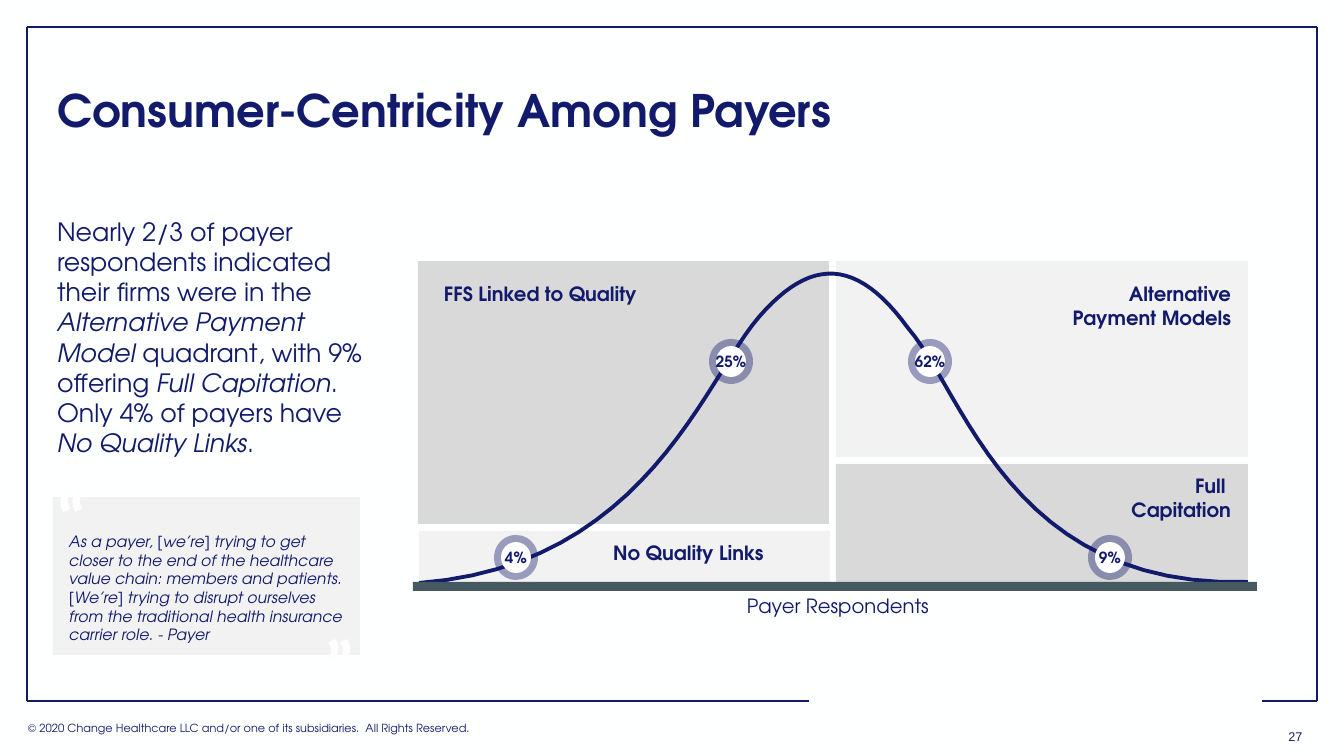
"""Build the slide on consumer-centricity among payers."""
from lxml import etree
from pptx import Presentation
from pptx.dml.color import RGBColor
from pptx.enum import shapes, text
from pptx.oxml import ns
from pptx import util as u

PX = 12192000 / 1344
NAVY = RGBColor(0x12, 0x1A, 0x6C)
SLATE = RGBColor(0x46, 0x59, 0x61)
GREY = RGBColor(0xD9, 0xD9, 0xD9)
PALE = RGBColor(0xF2, 0xF2, 0xF2)
WHITE = RGBColor(0xFF, 0xFF, 0xFF)
PAPER = RGBColor(0xFE, 0xFF, 0xFF)
QUOTE_WHITE = RGBColor(0xFE, 0xFE, 0xFE)
FONT = "TeX Gyre Adventor"
LEFT, CENTER, RIGHT = text.PP_ALIGN.LEFT, text.PP_ALIGN.CENTER, text.PP_ALIGN.RIGHT
RECTANGLE, OVAL = shapes.MSO_SHAPE.RECTANGLE, shapes.MSO_SHAPE.OVAL

TITLE = "Consumer-Centricity Among Payers"
TITLE_BOX = (47, 40, 1250, 146)
SUMMARY_BOX = (47, 211, 337, 316)
SUMMARY = [
    ("Nearly 2/3 of payer respondents indicated their firms were in the ", False),
    ("Alternative Payment Model ", True),
    ("quadrant, with 9% offering ", False),
    ("Full Capitation", True),
    (". Only 4% of payers have ", False),
    ("No Quality Links", True),
    (".", False),
]
QUOTE_BOX = (53, 497, 307, 158)
QUOTE = ("As a payer, [we’re] trying to get closer to the end of the healthcare value chain: "
         "members and patients. [We’re] trying to disrupt ourselves from the traditional "
         "health insurance carrier role. - Payer")
QUOTE_MARKS = [("“", (45, 465, 54, 102)), ("”", (313, 614, 54, 102))]
FRAME = [
    (809, 701, 27, 701), (1317, 27, 27, 27), (1317, 27, 1317, 701),
    (27, 27, 27, 701), (1317, 701, 1262, 701),
]
PANELS = [
    ((418, 261, 411, 263), GREY), ((836, 261, 412, 196), PALE),
    ((419, 531, 411, 53), PALE), ((836, 464, 412, 120), GREY),
]
CURVE = [
    (419, 583), (646, 566), (705, 379), (759, 317), (811, 257),
    (857, 258), (908, 328), (965, 394), (1010, 589), (1248, 582),
]
AXIS = (413, 582, 844, 9)
LABELS = [
    ("FFS Linked to Quality", (434, 277, 253, 34), LEFT, 14, True),
    ("No Quality Links", (539, 536, 299, 34), CENTER, 14, True),
    ("Alternative Payment Models", (1050, 277, 191, 57), RIGHT, 14, True),
    ("Full \nCapitation", (1035, 469, 206, 57), RIGHT, 14, True),
    ("Payer Respondents", (638, 589, 400, 34), CENTER, 14, False),
    ("© 2020 Change Healthcare LLC and/or one of its subsidiaries.  All Rights Reserved.",
     (18, 716, 657, 24), LEFT, 8, False),
]
PAGE_NUMBER = ("27", (1275, 714, 41, 45))
MARKERS = [("4%", 494, 535), ("9%", 1088, 535), ("25%", 709, 339), ("62%", 908, 339)]
RING, RING_WIDTH = (44, 45), 7
STEPS = 24


def emu(values):
    return [round(value * PX) for value in values]


def place(shape, box):
    shape.left, shape.top, shape.width, shape.height = emu(box)


def style(paragraph, size, bold=False, italic=False, align=LEFT, name=FONT):
    paragraph.alignment = align
    font = paragraph.font
    font.name, font.size, font.bold, font.italic = name, u.Pt(size), bold, italic
    font.color.rgb = NAVY


def add_filled(slide, kind, box, color, alpha=None):
    shape = slide.shapes.add_shape(kind, *emu(box))
    shape.shadow.inherit = False
    shape.fill.solid()
    shape.fill.fore_color.rgb = color
    shape.line.fill.background()
    if alpha:
        fill_color = shape.fill._xPr.find(".//" + ns.qn("a:srgbClr"))
        etree.SubElement(fill_color, ns.qn("a:alpha")).set("val", str(alpha * 1000))
    return shape


def add_label(slide, words, box, align, size, bold, name=FONT):
    frame = slide.shapes.add_textbox(*emu(box)).text_frame
    frame.word_wrap = True
    frame.text = words
    for paragraph in frame.paragraphs:
        style(paragraph, size, bold, align=align, name=name)
    return frame


def add_frame(slide):
    for ends in FRAME:
        line = slide.shapes.add_connector(shapes.MSO_CONNECTOR.STRAIGHT, *emu(ends))
        line.line.color.rgb = NAVY
        line.line.width = u.Pt(2)
        etree.SubElement(line._element.spPr, ns.qn("a:effectLst"))


def curve_points():
    for start in range(0, len(CURVE) - 1, 3):
        controls = CURVE[start:start + 4]
        for step in range(1, STEPS + 1):
            t = step / STEPS
            weights = ((1 - t) ** 3, 3 * t * (1 - t) ** 2, 3 * t * t * (1 - t), t ** 3)
            yield emu(sum(w * point[axis] for w, point in zip(weights, controls))
                      for axis in (0, 1))


def add_curve(slide):
    builder = slide.shapes.build_freeform(*emu(CURVE[0]))
    builder.add_line_segments(curve_points(), close=False)
    curve = builder.convert_to_shape()
    curve.shadow.inherit = False
    curve.fill.background()
    curve.line.color.rgb = NAVY
    curve.line.width = u.Pt(2.75)


def add_marker(slide, words, left, top):
    width, height = RING
    add_filled(slide, OVAL, (left, top, width, height), NAVY, alpha=40)
    core = add_filled(slide, OVAL, (left + RING_WIDTH, top + RING_WIDTH,
                                    width - 2 * RING_WIDTH, height - 2 * RING_WIDTH), WHITE)
    frame = core.text_frame
    frame.margin_left = frame.margin_right = frame.margin_top = frame.margin_bottom = 0
    frame.word_wrap = False
    frame.vertical_anchor = text.MSO_ANCHOR.MIDDLE
    frame.text = words
    style(frame.paragraphs[0], 11, True, align=CENTER)


def add_quote_mark(slide, mark, box):
    frame = slide.shapes.add_textbox(*emu(box)).text_frame
    frame.word_wrap = False
    paragraph = frame.paragraphs[0]
    paragraph.alignment = CENTER
    run = paragraph.add_run()
    run.text = mark
    font = run.font
    font.name, font.size, font.bold = "Calibri", u.Pt(54), True
    font.color.rgb = QUOTE_WHITE
    properties = font._element
    properties.set("spc", "50")
    outline = etree.Element(ns.qn("a:ln"), w=str(u.Pt(0.75)))
    fill = etree.SubElement(outline, ns.qn("a:solidFill"))
    etree.SubElement(fill, ns.qn("a:srgbClr")).set("val", str(NAVY))
    properties.insert(0, outline)


def add_title(slide):
    title = slide.shapes.title
    place(title, TITLE_BOX)
    frame = title.text_frame
    frame.text = TITLE
    frame.auto_size = text.MSO_AUTO_SIZE.NONE
    frame.vertical_anchor = text.MSO_ANCHOR.MIDDLE
    frame.paragraphs[0].line_spacing = 0.9
    style(frame.paragraphs[0], 32, True)


def add_summary(slide):
    body = slide.placeholders[1]
    place(body, SUMMARY_BOX)
    frame = body.text_frame
    frame.auto_size = text.MSO_AUTO_SIZE.NONE
    paragraph = frame.paragraphs[0]
    paragraph.space_before = u.Pt(0)
    properties = paragraph._p.get_or_add_pPr()
    properties.set("marL", "0")
    properties.set("indent", "0")
    etree.SubElement(properties, ns.qn("a:buNone"))
    style(paragraph, 18)
    for words, italic in SUMMARY:
        run = paragraph.add_run()
        run.text = words
        run.font.italic = italic


def add_quote(slide):
    frame = add_filled(slide, RECTANGLE, QUOTE_BOX, PALE).text_frame
    frame.margin_left, frame.margin_top, frame.margin_right, frame.margin_bottom = emu(
        (16, 29, 10, 5))
    frame.word_wrap = True
    frame.vertical_anchor = text.MSO_ANCHOR.MIDDLE
    frame.text = QUOTE
    style(frame.paragraphs[0], 11.1, italic=True)
    for mark, box in QUOTE_MARKS:
        add_quote_mark(slide, mark, box)


def main():
    presentation = Presentation()
    presentation.slide_width, presentation.slide_height = emu((1344, 756))
    slide = presentation.slides.add_slide(presentation.slide_layouts[1])
    slide.background.fill.solid()
    slide.background.fill.fore_color.rgb = PAPER
    add_frame(slide)
    add_title(slide)
    add_summary(slide)
    for box, color in PANELS:
        add_filled(slide, RECTANGLE, box, color)
    add_curve(slide)
    add_filled(slide, RECTANGLE, AXIS, SLATE)
    for label in LABELS:
        add_label(slide, *label)
    number = add_label(slide, *PAGE_NUMBER, CENTER, 9, False, "Arial")
    number.vertical_anchor = text.MSO_ANCHOR.MIDDLE
    for marker in MARKERS:
        add_marker(slide, *marker)
    add_quote(slide)
    presentation.save("out.pptx")


if __name__ == "__main__":
    main()
